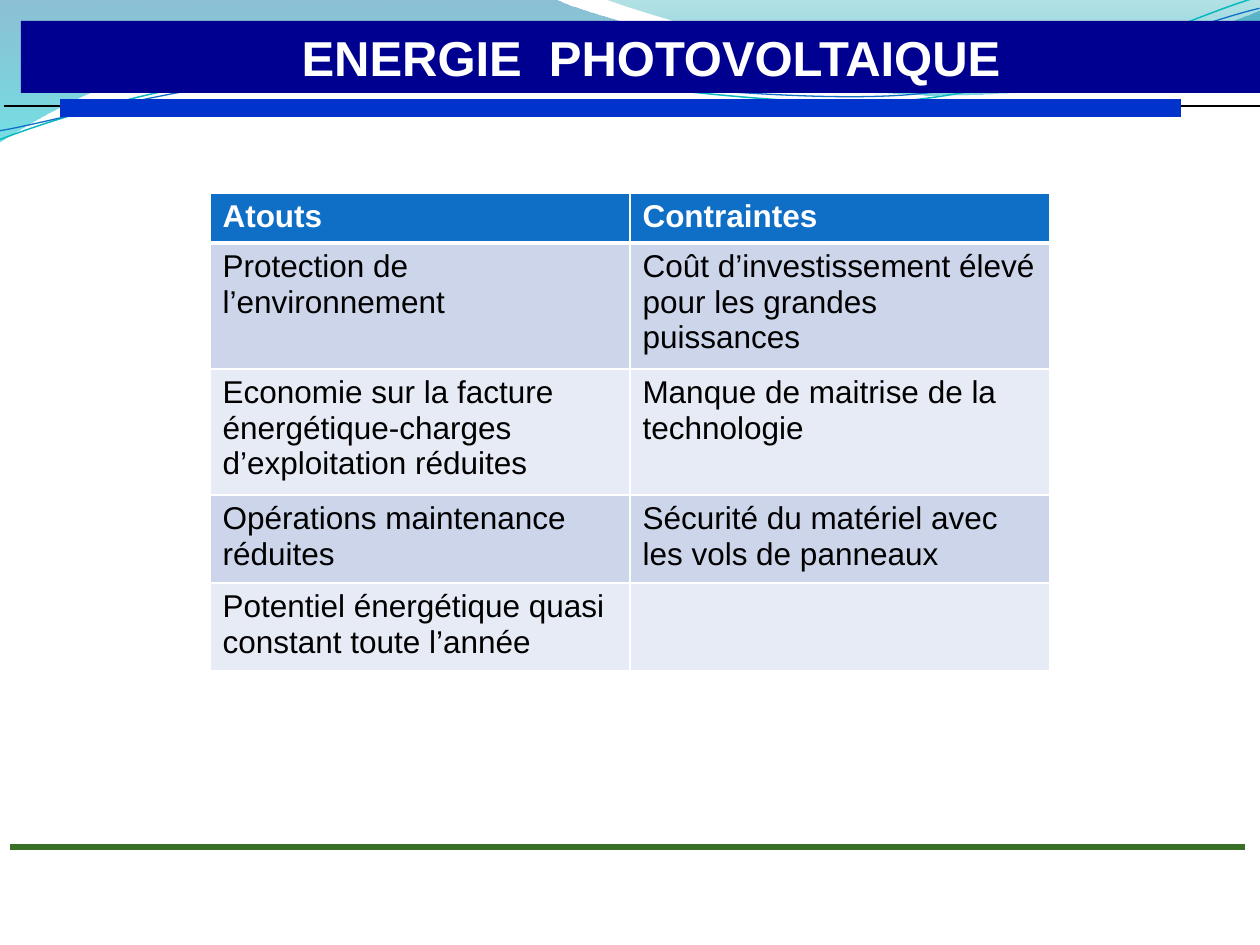
from dataclasses import dataclass

from lxml import etree
from pptx import Presentation
from pptx.dml.color import RGBColor
from pptx.enum.shapes import MSO_CONNECTOR
from pptx.enum.text import MSO_ANCHOR, PP_ALIGN
from pptx.oxml.ns import qn
from pptx.util import Pt

STRAIGHT = MSO_CONNECTOR.STRAIGHT
MIDDLE = MSO_ANCHOR.MIDDLE
CENTER = PP_ALIGN.CENTER
TITLE_ONLY = 5


@dataclass(frozen=True)
class Theme:
    font: str = "Arial"
    title_size: int = 28
    table_size: int = 18
    white: str = "FFFFFF"
    black: str = "000000"
    navy: str = "000090"
    royal: str = "0033CC"
    green: str = "387026"
    blue: str = "0F6FC6"
    teal: str = "0AB8BF"
    bands: tuple = ("CCD5EA", "E7EBF5")


def emu(px):
    return round(px * 914400 / 126)


def rgb(color):
    return RGBColor.from_string(color)


class SlideBuilder:
    def __init__(self, slide, theme):
        self.slide = slide
        self.theme = theme

    def style_font(self, paragraph, size, color, bold):
        font = paragraph.font
        font.name = self.theme.font
        font.size = Pt(size)
        font.bold = bold
        font.color.rgb = rgb(color)

    def outline(self, start, segments, close):
        builder = self.slide.shapes.build_freeform(emu(start[0]), emu(start[1]))
        points = [(emu(x), emu(y)) for segment in segments for x, y in segment]
        builder.add_line_segments(points, close=close)
        shape = builder.convert_to_shape()
        shape.shadow.inherit = False
        steps = iter(list(shape._element.spPr.iter(qn("a:lnTo"))))
        for segment in segments:
            first, *others = [next(steps) for _ in segment]
            if others:
                curve = etree.Element(qn("a:cubicBezTo"))
                first.getparent().replace(first, curve)
                for step in (first, *others):
                    curve.append(step[0])
                for step in others:
                    step.getparent().remove(step)
        return shape

    def wave(self, start, segments, stops):
        shape = self.outline(start, segments, True)
        shape.line.fill.background()
        shape.fill.gradient()
        shape.fill.gradient_angle = 270
        for stop, (position, color, _) in zip(shape.fill.gradient_stops, stops):
            stop.position = position
            stop.color.rgb = rgb(color)
        colors = shape._element.spPr.iter(qn("a:srgbClr"))
        for color, (_, _, opacity) in zip(colors, stops):
            etree.SubElement(color, qn("a:alpha"), val=str(opacity * 1000))

    def strand(self, start, segments, color, width):
        shape = self.outline(start, segments, False)
        shape.rotation = 357.3
        shape.fill.background()
        shape.line.color.rgb = rgb(color)
        shape.line.width = Pt(width)

    def rule(self, left, right, y, color, width):
        line = self.slide.shapes.add_connector(
            STRAIGHT, emu(left), emu(y), emu(right), emu(y))
        line.line.color.rgb = rgb(color)
        line.line.width = Pt(width)
        etree.SubElement(line._element.spPr, qn("a:effectLst"))

    def title(self, text, left, top, width, height):
        title = self.slide.shapes.title
        self.slide.shapes._spTree.append(title._element)
        title.left, title.top = emu(left), emu(top)
        title.width, title.height = emu(width), emu(height)
        title.fill.solid()
        title.fill.fore_color.rgb = rgb(self.theme.navy)
        frame = title.text_frame
        frame.text = text
        frame.word_wrap = True
        frame.vertical_anchor = MIDDLE
        heading = frame.paragraphs[0]
        heading.alignment = CENTER
        self.style_font(heading, self.theme.title_size, self.theme.white, True)

    def border(self, cell, bottom_width):
        properties = cell._tc.get_or_add_tcPr()
        for side, width in (("L", 1), ("R", 1), ("T", 1), ("B", bottom_width)):
            edge = etree.SubElement(properties, qn(f"a:ln{side}"), w=str(Pt(width)))
            fill = etree.SubElement(edge, qn("a:solidFill"))
            etree.SubElement(fill, qn("a:srgbClr"), val=self.theme.white)

    def table(self, rows, left, top, width, heights):
        theme = self.theme
        table = self.slide.shapes.add_table(
            len(rows), len(rows[0]), emu(left), emu(top),
            emu(width), emu(sum(heights))).table
        for row_index, (texts, height) in enumerate(zip(rows, heights)):
            header = row_index == 0
            table.rows[row_index].height = emu(height)
            fill = theme.blue if header else theme.bands[(row_index - 1) % 2]
            ink = theme.white if header else theme.black
            for column, text in enumerate(texts):
                cell = table.cell(row_index, column)
                self.border(cell, 3 if header else 1)
                cell.fill.solid()
                cell.fill.fore_color.rgb = rgb(fill)
                cell.text = text
                self.style_font(
                    cell.text_frame.paragraphs[0], theme.table_size, ink, header)


def main():
    theme = Theme()
    presentation = Presentation()
    presentation.slide_width, presentation.slide_height = emu(1260), emu(945)
    layout = presentation.slide_layouts[TITLE_ONLY]
    page = SlideBuilder(presentation.slides.add_slide(layout), theme)

    page.wave((0, 0), [
        [(554, -1)],
        [(600, 21), (837, 79), (955, 79)],
        [(1075, 79), (1207, 33), (1260, 11)],
        [(1261, 45)],
        [(1239, 55), (1096, 96), (940, 95)],
        [(784, 95), (481, 35), (324, 43)],
        [(163, 45), (58, 105), (-1, 142)],
        [(0, 0)],
    ], [(0, "0074A1", 45), (1, "00C6CF", 55)])
    page.wave((604, -1), [
        [(641, 14), (859, 78), (969, 82)],
        [(1079, 87), (1211, 40), (1260, 26)],
        [(1260, 0)],
        [(604, -1)],
    ], [(0, "00A1A9", 30), (0.8, "008BBF", 45)])
    page.strand((-3, 110), [
        [(58, 90), (199, 52), (350, 53)],
        [(500, 53), (745, 117), (896, 114)],
        [(1049, 109), (1184, 45), (1260, 27)],
    ], theme.teal, 0.85)
    page.strand((-2, 101), [
        [(57, 94), (207, 57), (357, 58)],
        [(509, 58), (750, 111), (902, 108)],
        [(1052, 104), (1188, 52), (1262, 38)],
    ], theme.blue, 0.75)

    page.rule(4, 1260, 106, theme.black, 1)
    page.rule(10, 1245, 847, theme.green, 3)
    page.rule(60, 1181, 108, theme.royal, 10)

    page.table([
        ("Atouts", "Contraintes"),
        ("Protection de l’environnement",
         "Coût d’investissement élevé pour les grandes puissances"),
        ("Economie sur la facture énergétique-charges d’exploitation réduites",
         "Manque de maitrise de la technologie"),
        ("Opérations maintenance réduites",
         "Sécurité du matériel avec les vols de panneaux"),
        ("Potentiel énergétique quasi constant toute l’année", ""),
    ], 210, 193, 840, (50, 126, 126, 88, 88))
    page.title("ENERGIE  PHOTOVOLTAIQUE", 21, 21, 1260, 72)

    presentation.save("out.pptx")


if __name__ == "__main__":
    main()
